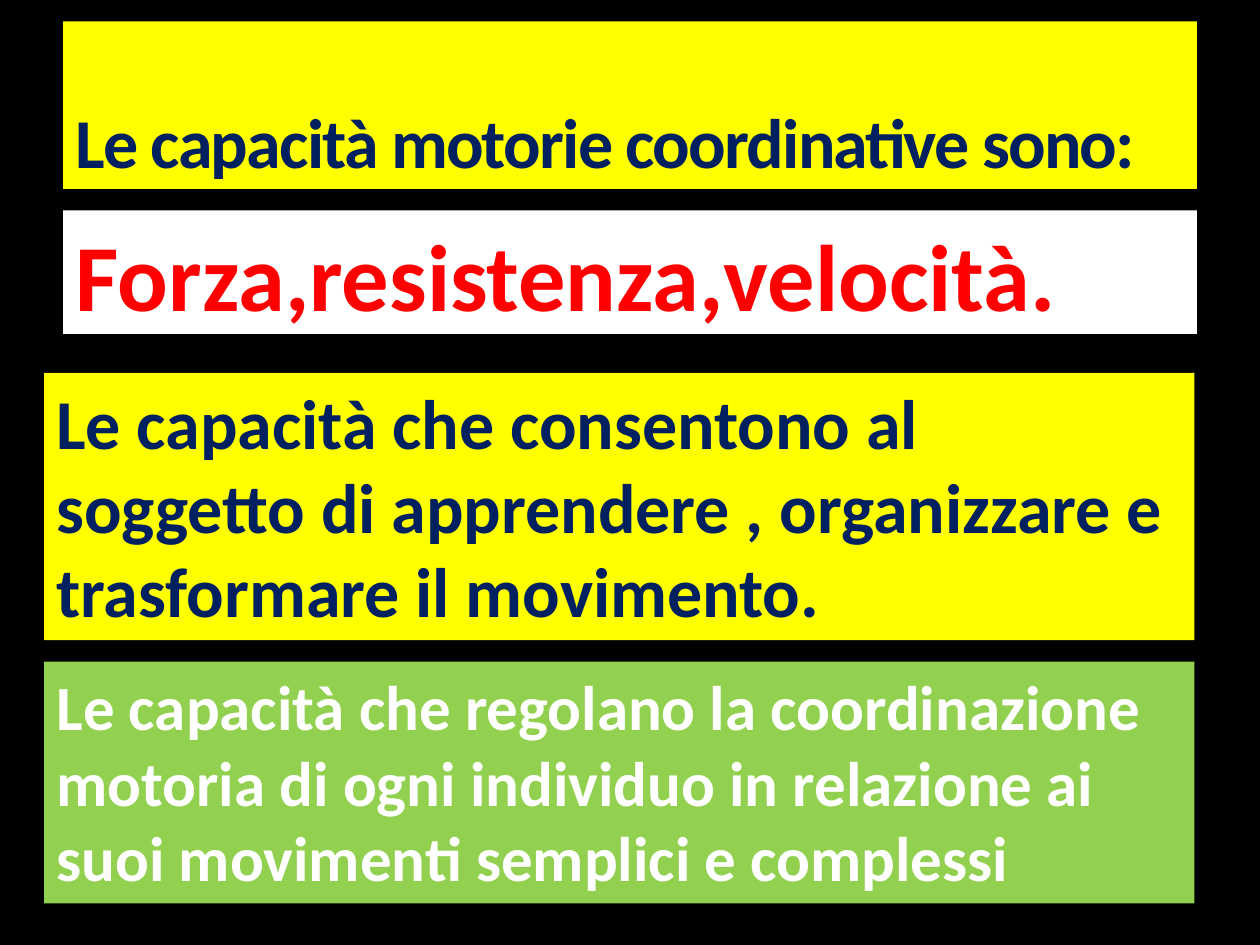
from dataclasses import dataclass

from lxml import etree
from pptx import Presentation
from pptx.dml.color import RGBColor
from pptx.enum.text import MSO_ANCHOR, MSO_AUTO_SIZE, PP_ALIGN
from pptx.oxml.ns import qn
from pptx.util import Inches, Pt

LEFT = PP_ALIGN.LEFT
TOP, BOTTOM = MSO_ANCHOR.TOP, MSO_ANCHOR.BOTTOM
NO_FIT, GROW = MSO_AUTO_SIZE.NONE, MSO_AUTO_SIZE.SHAPE_TO_FIT_TEXT


@dataclass(frozen=True)
class Theme:
    font: str = "Calibri"
    black: str = "000000"
    white: str = "FFFFFF"
    yellow: str = "FFFF00"
    green: str = "92D050"
    navy: str = "002060"
    red: str = "FF0000"
    small: int = 36
    medium: int = 40
    large: int = 54


THEME = Theme()


def set_fill(fill, color):
    fill.solid()
    fill.fore_color.rgb = RGBColor.from_string(color)


def add_text(sp, text, *, size, color, anchor=TOP, fit=NO_FIT, before=0, spacing=0):
    tf = sp.text_frame
    tf.word_wrap = True
    tf.auto_size = fit
    tf.vertical_anchor = anchor
    p = tf.paragraphs[0]
    p.alignment = LEFT
    p.space_before = Pt(before)
    r = p.add_run()
    r.text = text
    r.font.name = THEME.font
    r.font.size = Pt(size)
    r.font.bold = True
    r.font.color.rgb = RGBColor.from_string(color)
    if spacing:
        r._r.get_or_add_rPr().set("spc", str(spacing * 100))
    return p


def place(sp, left, top, width, height):
    sp.left, sp.top = Inches(left), Inches(top)
    sp.width, sp.height = Inches(width), Inches(height)


def fill_placeholder(sp, text, box, fill, **fmt):
    place(sp, *box)
    set_fill(sp.fill, fill)
    return add_text(sp, text, **fmt)


def remove_bullet(p):
    pPr = p._p.get_or_add_pPr()
    pPr.set("marL", "0")
    pPr.set("indent", "0")
    etree.SubElement(pPr, qn("a:buNone"))


def add_panel(s, text, box, fill, **fmt):
    sp = s.shapes.add_textbox(*map(Inches, box))
    set_fill(sp.fill, fill)
    add_text(sp, text, fit=GROW, **fmt)


def main():
    prs = Presentation()
    prs.slide_width, prs.slide_height = Inches(10), Inches(7.5)
    s = prs.slides.add_slide(prs.slide_layouts[1])
    set_fill(s.background.fill, THEME.black)

    fill_placeholder(s.shapes.title, "Le capacità motorie coordinative sono:",
                     (0.5, 0.17, 9, 1.33), THEME.yellow, size=THEME.medium,
                     color=THEME.navy, anchor=BOTTOM, spacing=-1)
    p = fill_placeholder(s.placeholders[1], "Forza,resistenza,velocità.",
                         (0.5, 1.67, 9, 0.98), THEME.white, size=THEME.large,
                         color=THEME.red, before=6)
    remove_bullet(p)

    add_panel(s, "Le capacità che consentono al soggetto di apprendere , "
              "organizzare e trasformare il movimento.",
              (0.35, 2.96, 9.13, 2.12), THEME.yellow,
              size=THEME.medium, color=THEME.navy)
    add_panel(s, "Le capacità che regolano la coordinazione motoria di ogni "
              "individuo in relazione ai suoi movimenti semplici e complessi",
              (0.35, 5.25, 9.13, 1.92), THEME.green,
              size=THEME.small, color=THEME.white)
    prs.save("out.pptx")


if __name__ == "__main__":
    main()
